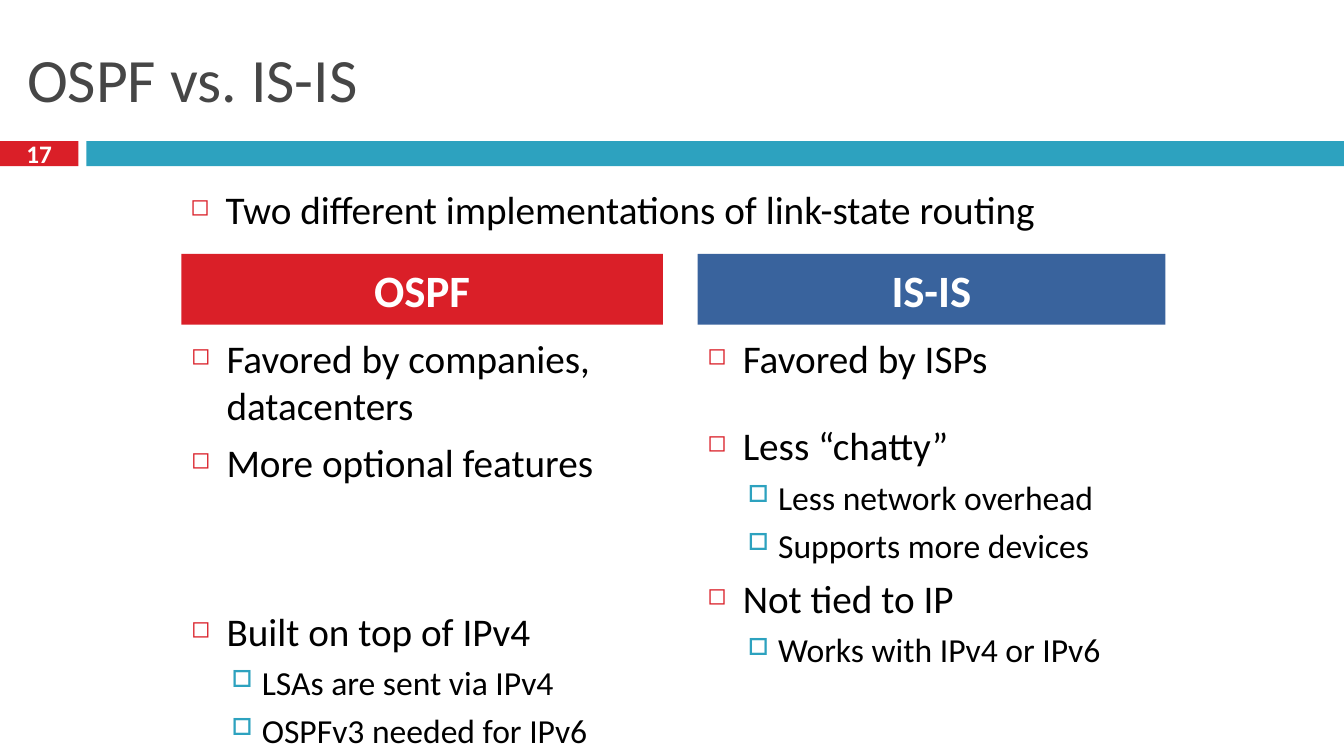
import pptx
import pptx.util
import pptx.dml.color
import pptx.enum.shapes
import pptx.enum.text
import pptx.oxml
import pptx.oxml.ns

Cm, Pt = pptx.util.Cm, pptx.util.Pt
ALIGN, ANCHOR = pptx.enum.text.PP_ALIGN, pptx.enum.text.MSO_ANCHOR
HUES = {"red": "DA1F28", "teal": "2DA2BF", "blue": "39639D",
        "gray": "464646", "black": "000000", "white": "FFFFFF"}
# Per level: size, space before, left margin, indent, bullet, hue, percent
LEVELS = [(28, 7, 0.89, -0.89, "◻", "red", 60),
          (24, 5.5, 1.78, -0.76, "□", "teal", 70)]


def write(para, text, size, hue, bold=False):
    run = para.add_run()
    run.text = text
    run.font.name = "Calibri"
    run.font.size = Pt(size)
    run.font.bold = bold
    run.font.color.rgb = pptx.dml.color.RGBColor.from_string(HUES[hue])


def add_bar(left, top, width, height, hue):
    bar = slide.shapes.add_shape(
        pptx.enum.shapes.MSO_SHAPE.RECTANGLE,
        Cm(left), Cm(top), Cm(width), Cm(height))
    bar.shadow.inherit = False
    bar.fill.solid()
    bar.fill.fore_color.rgb = pptx.dml.color.RGBColor.from_string(HUES[hue])
    bar.line.fill.background()
    frame = bar.text_frame
    frame.margin_top = frame.margin_bottom = 0
    frame.vertical_anchor = ANCHOR.MIDDLE
    frame.paragraphs[0].alignment = ALIGN.CENTER
    return frame.paragraphs[0]


deck = pptx.Presentation()
deck.slide_width, deck.slide_height = Cm(33.87), Cm(19.05)
slide = deck.slides.add_slide(deck.slide_layouts[5])

# Title
title = slide.shapes.title
title.left, title.top, title.width, title.height = Cm(0.43), Cm(0.76), Cm(27.91), Cm(2.41)
title.text_frame.vertical_anchor = ANCHOR.MIDDLE
title.text_frame.paragraphs[0].alignment = ALIGN.LEFT
write(title.text_frame.paragraphs[0], "OSPF vs. IS-IS", 44, "gray")

# Band with the page number
write(add_bar(0, 3.56, 1.98, 0.63, "red"), "17", 18, "white", True)
add_bar(2.18, 3.56, 31.69, 0.63, "teal")

# Column heads
for left, width, hue, text in [(4.57, 12.14, "red", "OSPF"),
                               (17.58, 11.79, "blue", "IS-IS")]:
    write(add_bar(left, 6.4, width, 1.78, hue), text, 32, "white", True)

# Bullet lists: box, then (level, text, extra space before)
lists = [
    ((4.55, 4.55, 24.71, 2.06), [
        (0, "Two different implementations of link-state routing", 0)]),
    ((4.57, 8.31, 12.14, 10.52), [
        (0, "Favored by companies, datacenters", 0),
        (0, "More optional features", 0),
        (0, "Built on top of IPv4", 80),
        (1, "LSAs are sent via IPv4", 0),
        (1, "OSPFv3 needed for IPv6", 0)]),
    ((17.58, 8.31, 11.79, 10.52), [
        (0, "Favored by ISPs", 0),
        (0, "Less “chatty”", 21.5),
        (1, "Less network overhead", 0),
        (1, "Supports more devices", 0),
        (0, "Not tied to IP", 0),
        (1, "Works with IPv4 or IPv6", 0)]),
]
for place, items in lists:
    frame = slide.shapes.add_textbox(*[Cm(v) for v in place]).text_frame
    frame.word_wrap = True
    for i, (level, text, extra) in enumerate(items):
        size, gap, margin, indent, mark, hue, scale = LEVELS[level]
        para = frame.add_paragraph() if i else frame.paragraphs[0]
        para.level = level
        para.space_before = Pt(gap + extra)
        props = para._p.get_or_add_pPr()
        props.set("marL", str(Cm(margin)))
        props.set("indent", str(Cm(indent)))
        space = pptx.oxml.ns.nsdecls("a")
        for tag in (f'<a:buClr {space}><a:srgbClr val="{HUES[hue]}"/></a:buClr>',
                    f'<a:buSzPct {space} val="{scale * 1000}"/>',
                    f'<a:buChar {space} char="{mark}"/>'):
            props.append(pptx.oxml.parse_xml(tag))
        write(para, text, size, "black")

deck.save("out.pptx")
